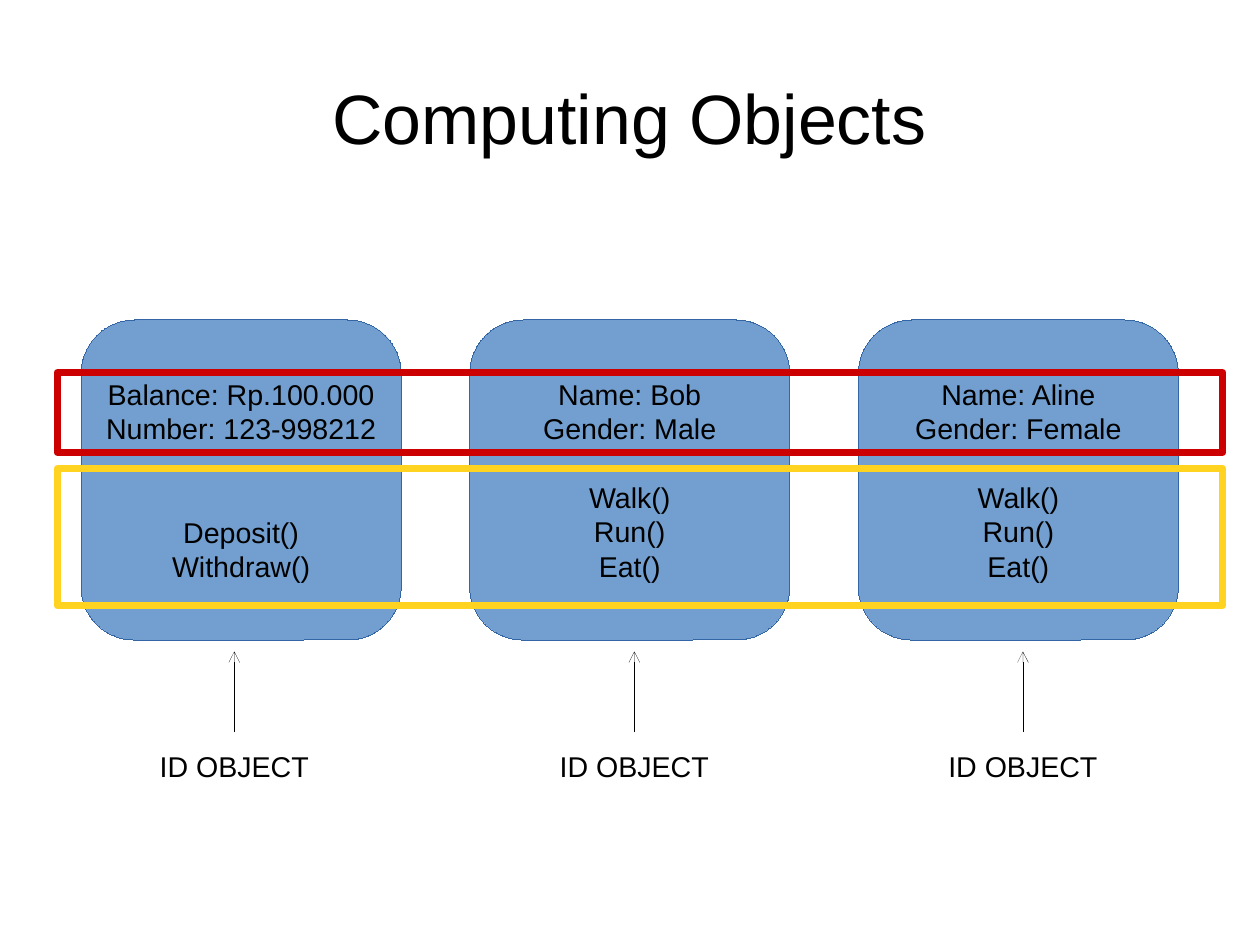
from dataclasses import dataclass

from lxml import etree
from pptx import Presentation
from pptx.dml.color import RGBColor
from pptx.enum.shapes import MSO_CONNECTOR, MSO_SHAPE
from pptx.enum.text import MSO_ANCHOR, PP_ALIGN
from pptx.oxml.ns import qn
from pptx.util import Inches, Pt

ROUNDED = MSO_SHAPE.ROUNDED_RECTANGLE
RECTANGLE = MSO_SHAPE.RECTANGLE
STRAIGHT = MSO_CONNECTOR.STRAIGHT
MIDDLE = MSO_ANCHOR.MIDDLE
TOP = MSO_ANCHOR.TOP
CENTER = PP_ALIGN.CENTER

TITLE = "Computing Objects"
LABEL = "ID OBJECT"
OBJECTS = [
    {"attributes": ["Balance: Rp.100.000", "Number: 123-998212"],
     "methods": ["Deposit()", "Withdraw()"], "arrow_x": 2.05},
    {"attributes": ["Name: Bob", "Gender: Male"],
     "methods": ["Walk()", "Run()", "Eat()"], "arrow_x": 5.55},
    {"attributes": ["Name: Aline", "Gender: Female"],
     "methods": ["Walk()", "Run()", "Eat()"], "arrow_x": 8.95},
]


@dataclass(frozen=True)
class Theme:
    font: str = "Arial"
    title_size: float = 44
    body_size: float = 18
    line_height: float = 21.7
    frame_width: float = 4.31
    text: str = "000000"
    box_fill: str = "729FCF"
    box_line: str = "3465A4"
    attribute_frame: str = "CC0000"
    method_frame: str = "FFD320"


THEME = Theme()
FRAMES = [(3.26, 0.7, THEME.attribute_frame), (4.1, 1.2, THEME.method_frame)]
CM_PER_INCH = 2.54
BOX_LEFT, BOX_TOP, BOX_SIZE, BOX_STEP = 0.71, 2.8, 2.8, 3.4
BOX_LINES = 6
FRAME_LEFT, FRAME_WIDTH = 0.5, 10.2
ARROW_START, ARROW_END = 6.4, 5.7
LABEL_TOP, LABEL_WIDTH, LABEL_HEIGHT = 6.5, 1.7, 0.4


def inches(*lengths):
    return [Inches(length) for length in lengths]


def set_attributes(target, values):
    for name, value in values.items():
        setattr(target, name, value)


def set_line(shape, color, width):
    shape.line.color.rgb = RGBColor.from_string(color)
    properties = shape._element.spPr.find(qn("a:ln"))
    properties.set("w", str(Pt(width)))
    return properties


def write_lines(shape, lines, size, anchor, wrap=False, margins=(0.1, 0.05)):
    frame = shape.text_frame
    horizontal, vertical = inches(*margins)
    set_attributes(frame, {
        "text": "\n".join(lines), "word_wrap": wrap, "vertical_anchor": anchor,
        "margin_left": horizontal, "margin_right": horizontal,
        "margin_top": vertical, "margin_bottom": vertical,
    })
    for paragraph in frame.paragraphs:
        paragraph.alignment = CENTER
        for run in paragraph.runs:
            set_attributes(run.font, {"name": THEME.font, "size": Pt(size)})
            run.font.color.rgb = RGBColor.from_string(THEME.text)
    return frame.paragraphs


def add_panel(slide, kind, bounds, line_color, line_width, fill=None):
    shape = slide.shapes.add_shape(kind, *inches(*bounds))
    shape.shadow.inherit = False
    if fill:
        shape.fill.solid()
        shape.fill.fore_color.rgb = RGBColor.from_string(fill)
    else:
        shape.fill.background()
    set_line(shape, line_color, line_width)
    return shape


def add_object(slide, index, item):
    bounds = (BOX_LEFT + index * BOX_STEP, BOX_TOP, BOX_SIZE, BOX_SIZE)
    box = add_panel(slide, ROUNDED, bounds, THEME.box_line, 0, THEME.box_fill)
    attributes, methods = item["attributes"], item["methods"]
    lines = attributes + methods
    paragraphs = write_lines(box, lines, THEME.body_size, MIDDLE)
    gap = (BOX_LINES - len(lines)) * THEME.line_height
    paragraphs[len(attributes)].space_before = Pt(gap)


def add_arrow(slide, x):
    arrow = slide.shapes.add_connector(
        STRAIGHT, *inches(x, ARROW_START, x, ARROW_END))
    properties = set_line(arrow, THEME.text, 0)
    etree.SubElement(properties, qn("a:tailEnd"), type="arrow")
    etree.SubElement(arrow._element.spPr, qn("a:effectLst"))


def add_label(slide, x):
    label = slide.shapes.add_textbox(
        *inches(x - LABEL_WIDTH / 2, LABEL_TOP, LABEL_WIDTH, LABEL_HEIGHT))
    write_lines(label, [LABEL], THEME.body_size, TOP)


def main():
    presentation = Presentation()
    presentation.slide_width = Inches(28 / CM_PER_INCH)
    presentation.slide_height = Inches(21 / CM_PER_INCH)
    slide = presentation.slides.add_slide(presentation.slide_layouts[5])

    title = slide.shapes.title
    set_attributes(title, dict(zip(
        ("left", "top", "width", "height"), inches(0.55, 0.33, 9.92, 1.38))))
    write_lines(title, [TITLE], THEME.title_size, MIDDLE, True, (0, 0))

    for index, item in enumerate(OBJECTS):
        add_object(slide, index, item)
    for top, height, color in FRAMES:
        bounds = (FRAME_LEFT, top, FRAME_WIDTH, height)
        add_panel(slide, RECTANGLE, bounds, color, THEME.frame_width)
    for item in OBJECTS:
        add_arrow(slide, item["arrow_x"])
        add_label(slide, item["arrow_x"])

    presentation.save("out.pptx")


if __name__ == "__main__":
    main()
